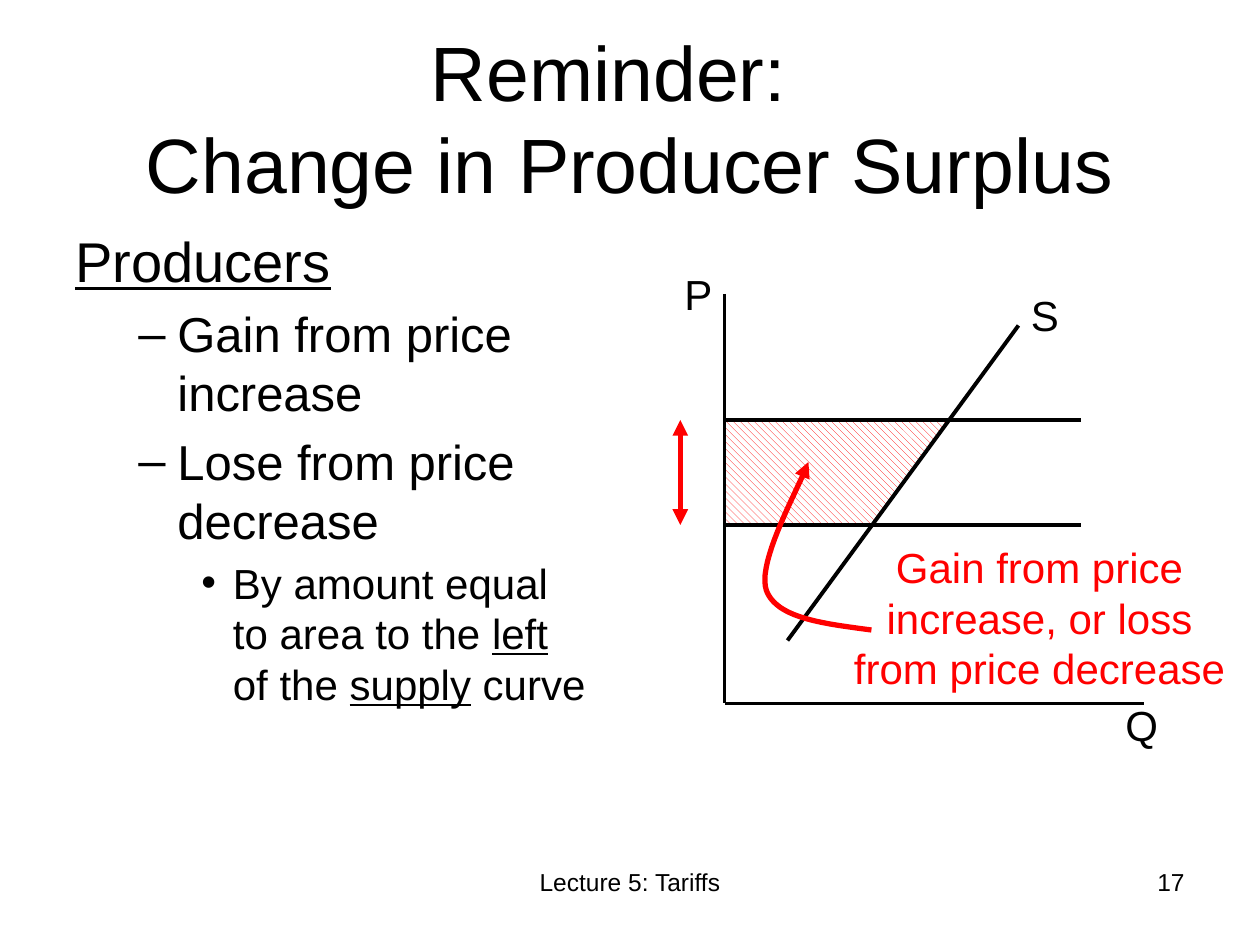
from lxml.etree import SubElement
from pptx import Presentation
from pptx.dml.color import RGBColor
from pptx.enum.dml import MSO_PATTERN
from pptx.enum.shapes import MSO_CONNECTOR
from pptx.enum.text import MSO_ANCHOR, PP_ALIGN
from pptx.oxml.ns import qn
from pptx.util import Inches, Pt

FONT = "Arial"
BLACK, RED, WHITE = "000000", "FF0000", "FFFFFF"

# Axes, prices and supply curve, in grid units of 1/12 inch
AXIS_X, AXIS_TOP, AXIS_BOTTOM, AXIS_RIGHT = 69, 28, 67, 109
HIGH_PRICE, LOW_PRICE, PRICE_RIGHT = 40, 50, 103
SUPPLY_TOP, SUPPLY_BOTTOM = (97, 31), (75, 61)


def grid(n):
    return Inches(n / 12)


def color(hex_string):
    return RGBColor.from_string(hex_string)


def add_runs(p, text, size, hex_color=BLACK):
    """Add text to a paragraph; parts between underscores are underlined."""
    for i, part in enumerate(text.split("_")):
        if part:
            r = p.add_run()
            r.text = part
            r.font.name, r.font.size = FONT, Pt(size)
            r.font.color.rgb = color(hex_color)
            r.font.underline = i % 2 == 1


def add_text(s, box, text="", size=24, hex_color=BLACK,
             align=PP_ALIGN.LEFT, anchor=MSO_ANCHOR.TOP):
    tf = s.shapes.add_textbox(*map(grid, box)).text_frame
    tf.word_wrap = True
    tf.vertical_anchor = anchor
    p = tf.paragraphs[0]
    p.alignment = align
    for i, line in enumerate(text.split("\n")):
        if i:
            p.add_line_break()
        add_runs(p, line, size, hex_color)
    return tf


def add_bullet(tf, text, size, level, bullet, left, hanging):
    p = tf.add_paragraph()
    p.level = level
    p.space_before = Pt(0.2 * size)
    pPr = p._p.get_or_add_pPr()
    pPr.set("marL", str(Inches(left)))
    pPr.set("indent", str(-Inches(hanging)))
    SubElement(pPr, qn("a:buFont"), typeface=FONT)
    SubElement(pPr, qn("a:buChar"), char=bullet)
    add_runs(p, text, size)


def style_line(sp, hex_color, width, arrows=()):
    """Arrows holds headEnd (at the start) and/or tailEnd (at the end)."""
    sp.line.color.rgb = color(hex_color)
    sp.line.width = Pt(width)
    for end in arrows:
        SubElement(sp.line._get_or_add_ln(), qn("a:" + end), type="triangle")


def add_line(s, start, end, hex_color=BLACK, width=2.25, arrows=()):
    sp = s.shapes.add_connector(MSO_CONNECTOR.STRAIGHT,
                                *map(grid, (*start, *end)))
    style_line(sp, hex_color, width, arrows)
    SubElement(sp._element.spPr, qn("a:effectLst"))


def add_outline(s, points, close):
    points = [(grid(x), grid(y)) for x, y in points]
    builder = s.shapes.build_freeform(*points[0])
    builder.add_line_segments(points[1:], close=close)
    sp = builder.convert_to_shape()
    sp.shadow.inherit = False
    return sp


def bezier(p0, p1, p2, p3, steps=20):
    for i in range(steps + 1):
        t = i / steps
        weights = ((1 - t) ** 3, 3 * t * (1 - t) ** 2,
                   3 * t ** 2 * (1 - t), t ** 3)
        yield tuple(sum(w * c for w, c in zip(weights, axis))
                    for axis in zip(p0, p1, p2, p3))


def supply_x(y):
    (x1, y1), (x2, y2) = SUPPLY_TOP, SUPPLY_BOTTOM
    return x1 + (y - y1) * (x2 - x1) / (y2 - y1)


def add_surplus_area(s):
    sp = add_outline(s, [(AXIS_X, HIGH_PRICE),
                         (supply_x(HIGH_PRICE), HIGH_PRICE),
                         (supply_x(LOW_PRICE), LOW_PRICE),
                         (AXIS_X, LOW_PRICE)], close=True)
    sp.fill.patterned()
    sp.fill.pattern = MSO_PATTERN.WIDE_DOWNWARD_DIAGONAL
    sp.fill.fore_color.rgb = color(RED)
    sp.fill.back_color.rgb = color(WHITE)
    style_line(sp, BLACK, 0.75)


def add_pointer(s):
    first = list(bezier((83, 60), (78.5, 59.4), (74, 58.9), (73, 56.25)))
    second = list(bezier((73, 56.25), (72, 53.5), (76.3, 46.1), (77, 44)))
    sp = add_outline(s, first + second[1:], close=False)
    sp.fill.background()
    style_line(sp, RED, 3, ["tailEnd"])


def add_diagram(s):
    add_surplus_area(s)

    # Axes, supply curve and price lines
    origin = (AXIS_X, AXIS_BOTTOM)
    add_line(s, (AXIS_X, AXIS_TOP), origin)
    add_line(s, origin, (AXIS_RIGHT, AXIS_BOTTOM))
    add_line(s, SUPPLY_TOP, SUPPLY_BOTTOM)
    for price in (LOW_PRICE, HIGH_PRICE):
        add_line(s, (AXIS_X, price), (PRICE_RIGHT, price))

    # Labels
    for text, x, y in (("Q", 106, 66), ("P", 64, 25), ("S", 97, 27)):
        add_text(s, (x, y, 7, 6), text)
    add_text(s, (80, 51, 38, 15.75),
             "Gain from price increase, or loss from price decrease",
             hex_color=RED, align=PP_ALIGN.CENTER)

    # Pointer to the area and the price change
    add_pointer(s)
    add_line(s, (64.8, HIGH_PRICE), (64.8, LOW_PRICE), RED, 3,
             ["headEnd", "tailEnd"])


def main():
    prs = Presentation()
    prs.slide_width, prs.slide_height = Inches(10), Inches(7.5)
    s = prs.slides.add_slide(prs.slide_layouts[6])

    # Footer
    add_text(s, (41, 82, 38, 6.25), "Lecture 5: Tariffs", size=14,
             align=PP_ALIGN.CENTER)
    add_text(s, (86, 82, 28, 6.25), "17", size=14, align=PP_ALIGN.RIGHT)

    # Body text
    tf = add_text(s, (6, 21, 51, 59.4), "_Producers_", size=32)
    for text in ("Gain from price increase", "Lose from price decrease"):
        add_bullet(tf, text, 28, 1, "–", 0.81, 0.31)
    add_bullet(tf, "By amount equal to area to the _left_ of the _supply_ curve",
               24, 2, "•", 1.25, 0.25)

    add_diagram(s)

    # Title
    add_text(s, (6, 3.6, 108, 15), "Reminder:  \nChange in Producer Surplus",
             size=44, align=PP_ALIGN.CENTER, anchor=MSO_ANCHOR.MIDDLE)

    prs.save("out.pptx")


if __name__ == "__main__":
    main()
